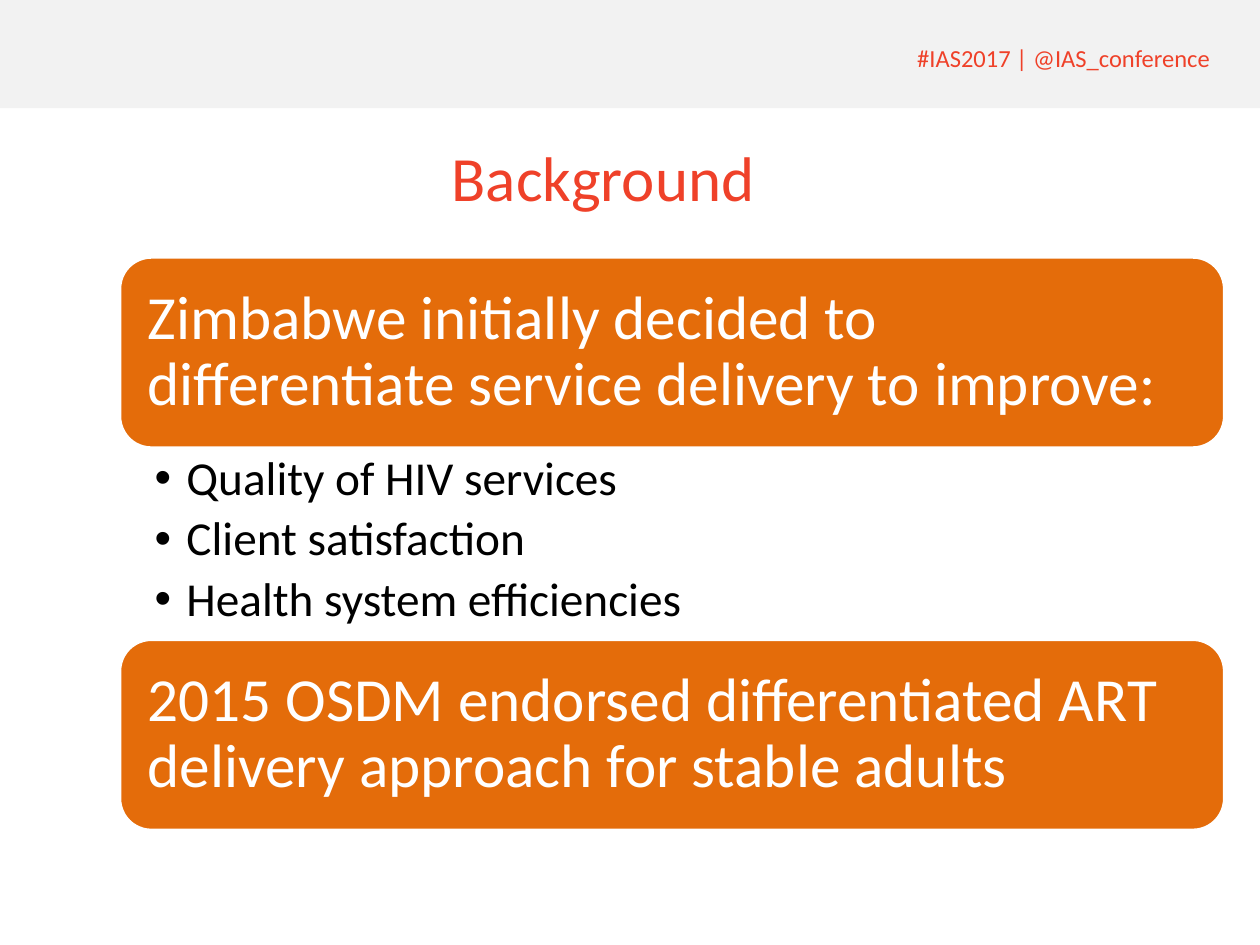
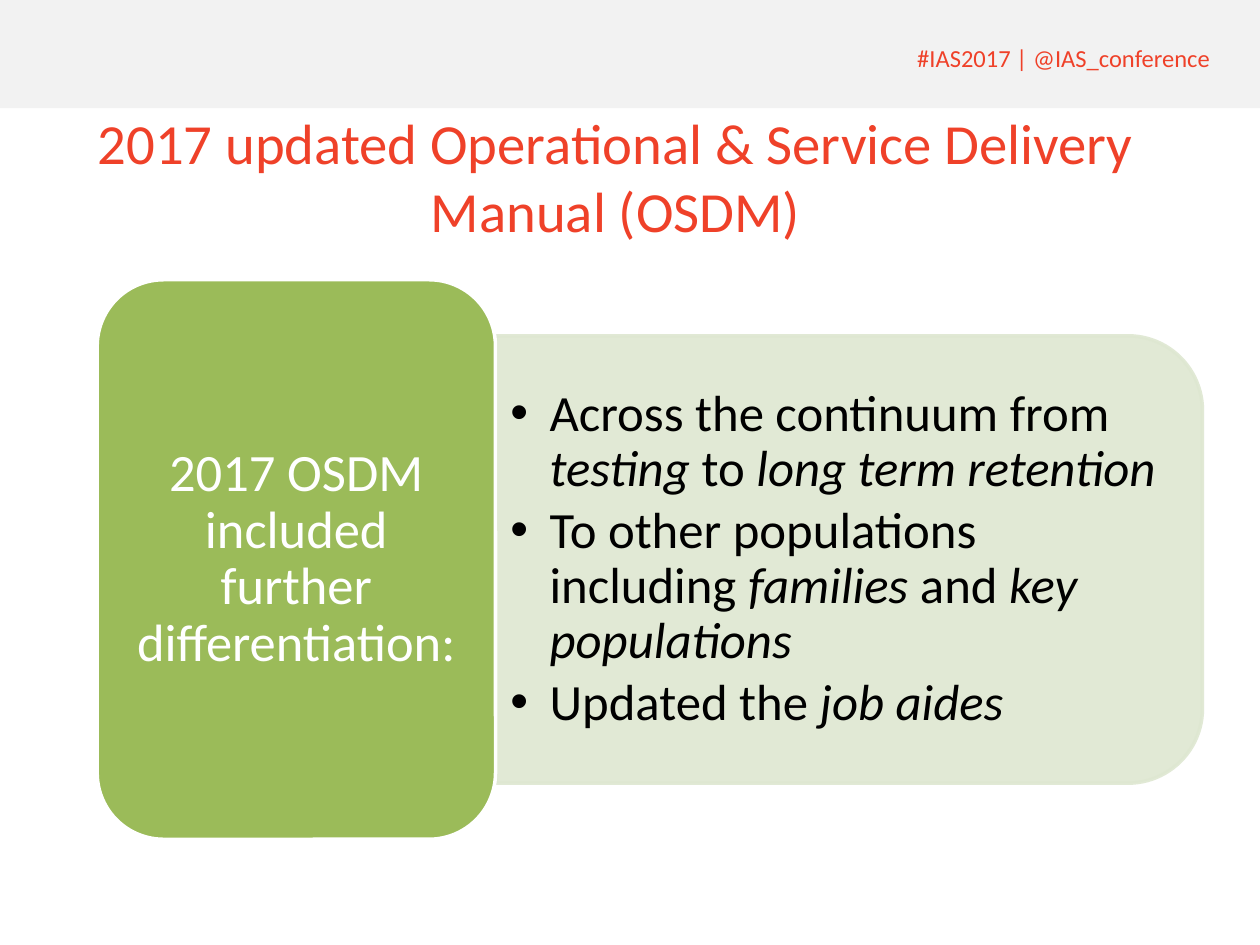
from pptx import Presentation
from pptx.dml.color import RGBColor
from pptx.enum.shapes import MSO_SHAPE
from pptx.enum.text import MSO_ANCHOR, PP_ALIGN
from pptx.oxml.ns import qn
from pptx.util import Cm, Pt
from lxml import etree

RECT = MSO_SHAPE.RECTANGLE
ROUNDED = MSO_SHAPE.ROUNDED_RECTANGLE
ROUND_TOP = MSO_SHAPE.ROUND_2_SAME_RECTANGLE
LEFT, CENTER = PP_ALIGN.LEFT, PP_ALIGN.CENTER
TOP, MIDDLE = MSO_ANCHOR.TOP, MSO_ANCHOR.MIDDLE

FONT = "Calibri"
RED, ORANGE, GREEN, PALE_GREEN = "EF4129", "E46C0A", "9BBB59", "DEE7D1"
GREY, WHITE, BLACK = "F2F2F2", "FFFFFF", "000000"
PAGE_WIDTH, PAGE_HEIGHT, BAND_HEIGHT = 25.4, 19.05, 2.18


def color(value):
    """Turn a hex string into a colour."""
    return RGBColor.from_string(value)


def add_bullet(para, indent):
    """Give a paragraph a round bullet with a hanging indent in cm."""
    properties = para._p.get_or_add_pPr()
    properties.set("marL", str(Cm(indent)))
    properties.set("indent", str(-Cm(indent)))
    etree.SubElement(properties, qn("a:buFont"), typeface="Arial")
    etree.SubElement(properties, qn("a:buChar"), char="•")


def write(shape, lines, size, ink, align=LEFT, anchor=MIDDLE, margins=(0.25, 0.13),
          indent=None, spacing=None, after=0):
    """Fill a shape with paragraphs, with italics between asterisks."""
    frame = shape.text_frame
    frame.word_wrap = True
    frame.vertical_anchor = anchor
    frame.margin_left = frame.margin_right = Cm(margins[0])
    frame.margin_top = frame.margin_bottom = Cm(margins[1])
    for number, line in enumerate(lines):
        para = frame.add_paragraph() if number else frame.paragraphs[0]
        if indent:
            add_bullet(para, indent)
        para.alignment = align
        para.line_spacing = spacing
        para.space_after = Pt(after)
        for position, words in enumerate(line.split("*")):
            if not words:
                continue
            span = para.add_run()
            span.text = words
            span.font.name = FONT
            span.font.size = Pt(size)
            span.font.italic = position % 2 == 1
            span.font.color.rgb = color(ink)


def add_text(page, box, lines, size, ink, **style):
    """Place a text box; box is left, top, width and height in cm."""
    shape = page.shapes.add_textbox(*map(Cm, box))
    write(shape, lines, size, ink, **style)


def add_block(page, kind, box, fill, outline=None):
    """Place a filled shape, with an outline if a colour is given."""
    shape = page.shapes.add_shape(kind, *map(Cm, box))
    shape.shadow.inherit = False
    shape.fill.solid()
    shape.fill.fore_color.rgb = color(fill)
    if outline:
        shape.line.color.rgb = color(outline)
        shape.line.width = Pt(2)
    else:
        shape.line.fill.background()
    return shape


def add_page(deck, title, title_left, title_size):
    """Add a page with the header band, conference handle and title."""
    page = deck.slides.add_slide(deck.slide_layouts[6])
    add_block(page, RECT, (0, 0, PAGE_WIDTH, BAND_HEIGHT), GREY)
    add_text(page, (18.24, 0.74, 7.1, 0.86), ["#IAS2017 | @IAS_conference"], 14, RED,
             anchor=TOP)
    add_text(page, (title_left, BAND_HEIGHT, 22.28, 2.74), [title], title_size, RED,
             align=CENTER)
    return page


def add_card_list(page, box, heading, points, closing):
    """Stack a heading card, a bullet list and a closing card in equal rows."""
    left, top, width, height = box
    row = height / 3
    for step, words in ((0, heading), (2, closing)):
        card = add_block(page, ROUNDED, (left, top + step * row, width, row), ORANGE, WHITE)
        write(card, [words], 35, WHITE, margins=(0.38, 0.38), spacing=0.9)
    add_text(page, (left, top + row, width, row), points, 27, BLACK, anchor=TOP,
             margins=(0.71, 0.13), indent=0.64, spacing=0.9, after=5.4)


def add_side_panel(page, box, points):
    """Draw a pale panel rounded on its right side, with bullets on it."""
    left, top, width, height = box
    shift = (width - height) / 2
    panel = add_block(page, ROUND_TOP, (left + shift, top - shift, height, width),
                      PALE_GREEN, PALE_GREEN)
    panel.rotation = 90
    for tint in panel._element.spPr.iter(qn("a:srgbClr")):
        etree.SubElement(tint, qn("a:alpha"), val="90000")
    add_text(page, (left, top + 0.45, width - 0.43, height - 0.9), points, 29, BLACK,
             margins=(0.3, 0.15), indent=0.79, spacing=0.9, after=4.35)


def add_label_and_panel(page, box, label, points):
    """Set a tall green label beside a lower panel centred on it."""
    left, top, width, height = box
    label_width, panel_height = 8.03, 9.02
    panel_top = top + (height - panel_height) / 2
    add_side_panel(page, (left + label_width, panel_top, width - label_width, panel_height),
                   points)
    block = add_block(page, ROUNDED, (left, top, label_width, height), GREEN, WHITE)
    write(block, [label], 30, WHITE, align=CENTER, margins=(0.3, 0.15), spacing=0.9)


def main():
    """Build and save the deck."""
    deck = Presentation()
    deck.slide_width, deck.slide_height = Cm(PAGE_WIDTH), Cm(PAGE_HEIGHT)

    background = add_page(deck, "Background", 1.02, 36)
    add_card_list(
        background, (2.41, 5.18, 22.28, 11.56),
        "Zimbabwe initially decided to differentiate service delivery to improve:",
        ["Quality of HIV services", "Client satisfaction", "Health system efficiencies"],
        "2015 OSDM endorsed differentiated ART delivery approach for stable adults")

    manual = add_page(
        deck, "2017 updated Operational & Service Delivery Manual (OSDM)", 1.27, 32.4)
    add_label_and_panel(
        manual, (1.96, 5.64, 22.28, 11.28),
        "2017 OSDM included further differentiation:",
        ["Across the continuum from *testing* to *long term retention*",
         "To other populations including *families* and *key populations*",
         "Updated the *job aides*"])

    deck.save("out.pptx")


if __name__ == "__main__":
    main()
